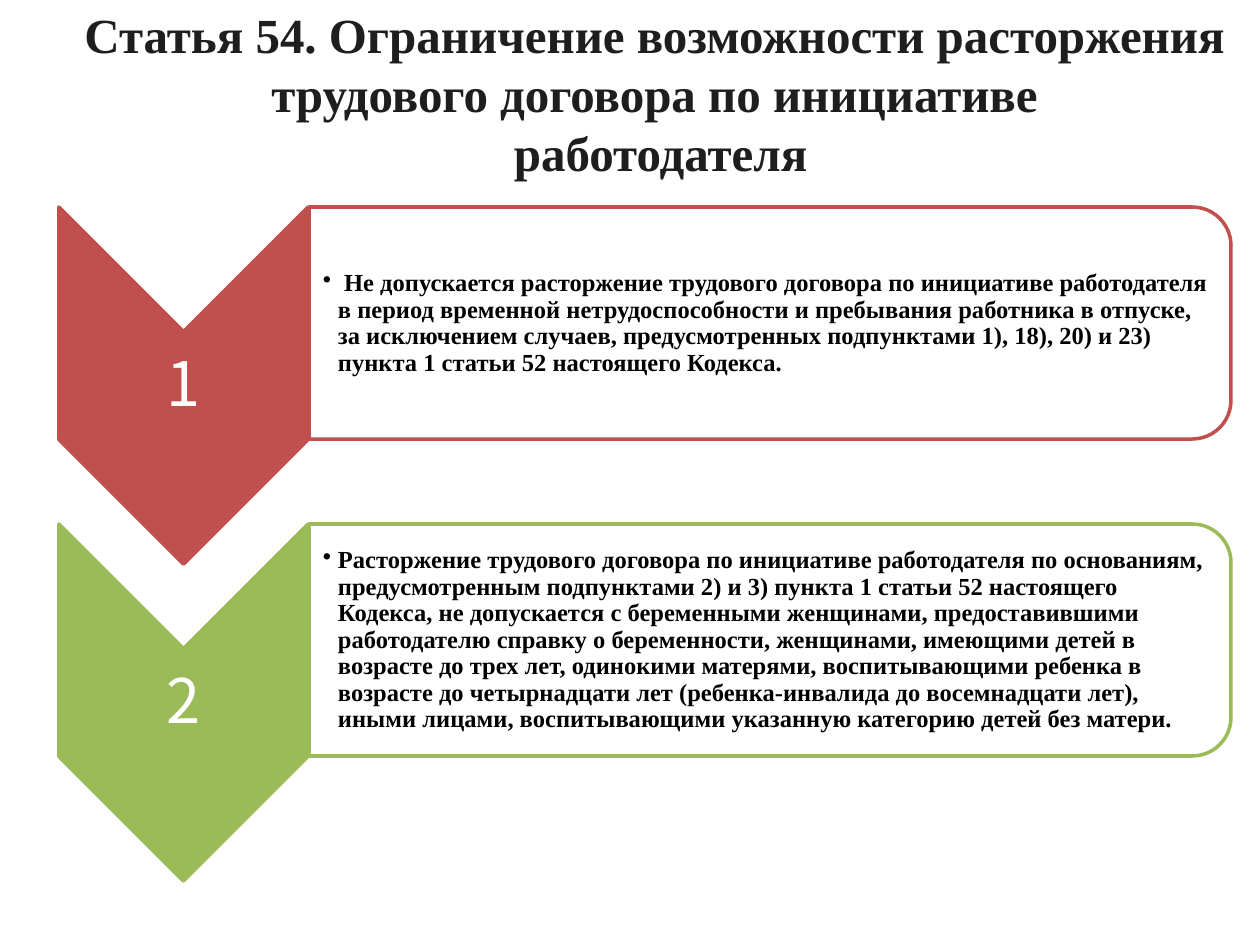
from dataclasses import dataclass

from lxml.etree import SubElement
from pptx import Presentation
from pptx.dml.color import RGBColor
from pptx.enum.shapes import MSO_SHAPE
from pptx.enum.text import MSO_ANCHOR, MSO_AUTO_SIZE, PP_ALIGN
from pptx.oxml.ns import qn
from pptx.util import Pt

EMU_PER_PX = 914400 / 126


@dataclass(frozen=True)
class Theme:
    title_color: str = "1E1E1E"
    body_color: str = "000000"
    paper: str = "FFFFFF"
    accents: tuple = ("C0504D", "9BBB59")
    serif: str = "Times New Roman"
    sans: str = "Noto Sans CJK KR"
    title_size: int = 28
    number_size: int = 35
    body_size: int = 14
    outline: int = 2


THEME = Theme()
TITLE = ("Статья 54. Ограничение возможности расторжения "
         "трудового договора по инициативе\v работодателя")
PROVISIONS = (
    " Не допускается расторжение трудового договора по инициативе работодателя "
    "в период временной нетрудоспособности и пребывания работника в отпуске, "
    "за исключением случаев, предусмотренных подпунктами 1), 18), 20) и 23) "
    "пункта 1 статьи 52 настоящего Кодекса.",
    "Расторжение трудового договора по инициативе работодателя по основаниям, "
    "предусмотренным подпунктами 2) и 3) пункта 1 статьи 52 настоящего Кодекса, "
    "не допускается с беременными женщинами, предоставившими работодателю справку "
    "о беременности, женщинами, имеющими детей в возрасте до трех лет, одинокими "
    "матерями, воспитывающими ребенка в возрасте до четырнадцати лет "
    "(ребенка-инвалида до восемнадцати лет), иными лицами, воспитывающими "
    "указанную категорию детей без матери.",
)
ROW_PITCH = 317


def px(length):
    return round(length * EMU_PER_PX)


def box(left, top, width, height):
    return px(left), px(top), px(width), px(height)


def style_font(paragraph, name, size, color, bold=False):
    font = paragraph.font
    font.name, font.size, font.bold = name, Pt(size), bold
    font.color.rgb = RGBColor.from_string(color)


def add_title(slide):
    title = slide.shapes.title
    title.left, title.top, title.width, title.height = box(49, 0, 1211, 186)
    frame = title.text_frame
    frame.text = TITLE
    frame.word_wrap = True
    frame.auto_size = MSO_AUTO_SIZE.NONE
    frame.vertical_anchor = MSO_ANCHOR.MIDDLE
    heading = frame.paragraphs[0]
    heading.alignment = PP_ALIGN.CENTER
    style_font(heading, THEME.serif, THEME.title_size, THEME.title_color, True)


def add_turned_shape(slide, preset, frame, fill, line):
    shape = slide.shapes.add_shape(preset, *box(*frame))
    shape.rotation = 90
    shape.shadow.inherit = False
    shape.fill.solid()
    shape.fill.fore_color.rgb = RGBColor.from_string(fill)
    shape.line.color.rgb = RGBColor.from_string(line)
    shape.line.width = Pt(THEME.outline)
    return shape


def add_text(slide, frame, text, left_inset, inset):
    text_frame = slide.shapes.add_textbox(*box(*frame)).text_frame
    text_frame.word_wrap = True
    text_frame.vertical_anchor = MSO_ANCHOR.MIDDLE
    text_frame.margin_left = px(left_inset)
    text_frame.margin_top = text_frame.margin_right = text_frame.margin_bottom = px(inset)
    paragraph = text_frame.paragraphs[0]
    paragraph.text = text
    paragraph.line_spacing = 0.9
    return paragraph


def add_bullet(paragraph, indent):
    properties = paragraph._p.get_or_add_pPr()
    properties.set("marL", str(px(indent)))
    properties.set("indent", str(-px(indent)))
    SubElement(properties, qn("a:buChar")).set("char", "•")


def make_translucent(shape, percent):
    color = shape._element.spPr.find(qn("a:solidFill")).find(qn("a:srgbClr"))
    SubElement(color, qn("a:alpha")).set("val", str(percent * 1000))


def add_provision(slide, row, provision, accent):
    offset = row * ROW_PITCH
    add_turned_shape(slide, MSO_SHAPE.CHEVRON, (5, 261 + offset, 357, 249), accent, accent)
    number = add_text(slide, (59, 333 + offset, 249, 107), str(row + 1), 3, 3)
    number.alignment = PP_ALIGN.CENTER
    style_font(number, THEME.sans, THEME.number_size, THEME.paper)

    panel = add_turned_shape(slide, MSO_SHAPE.ROUND_2_SAME_RECTANGLE,
                             (654, -138 + offset, 232, 922), THEME.paper, accent)
    make_translucent(panel, 90)
    body = add_text(slide, (309, 219 + offset, 911, 209), provision, 14, 1)
    add_bullet(body, 15)
    style_font(body, THEME.serif, THEME.body_size, THEME.body_color, True)


def main():
    presentation = Presentation()
    presentation.slide_width, presentation.slide_height = px(1260), px(945)
    slide = presentation.slides.add_slide(presentation.slide_layouts[5])
    add_title(slide)
    for row, (provision, accent) in enumerate(zip(PROVISIONS, THEME.accents)):
        add_provision(slide, row, provision, accent)
    presentation.save("out.pptx")


if __name__ == "__main__":
    main()
